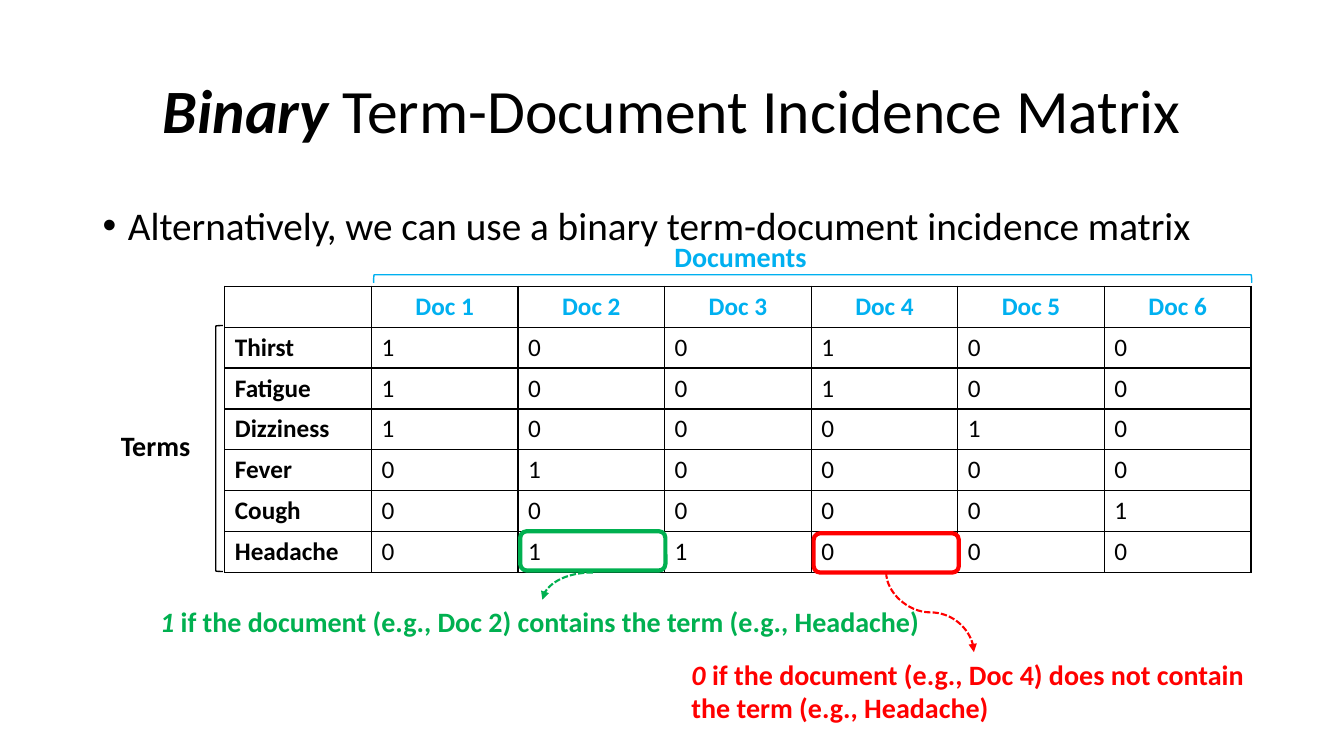
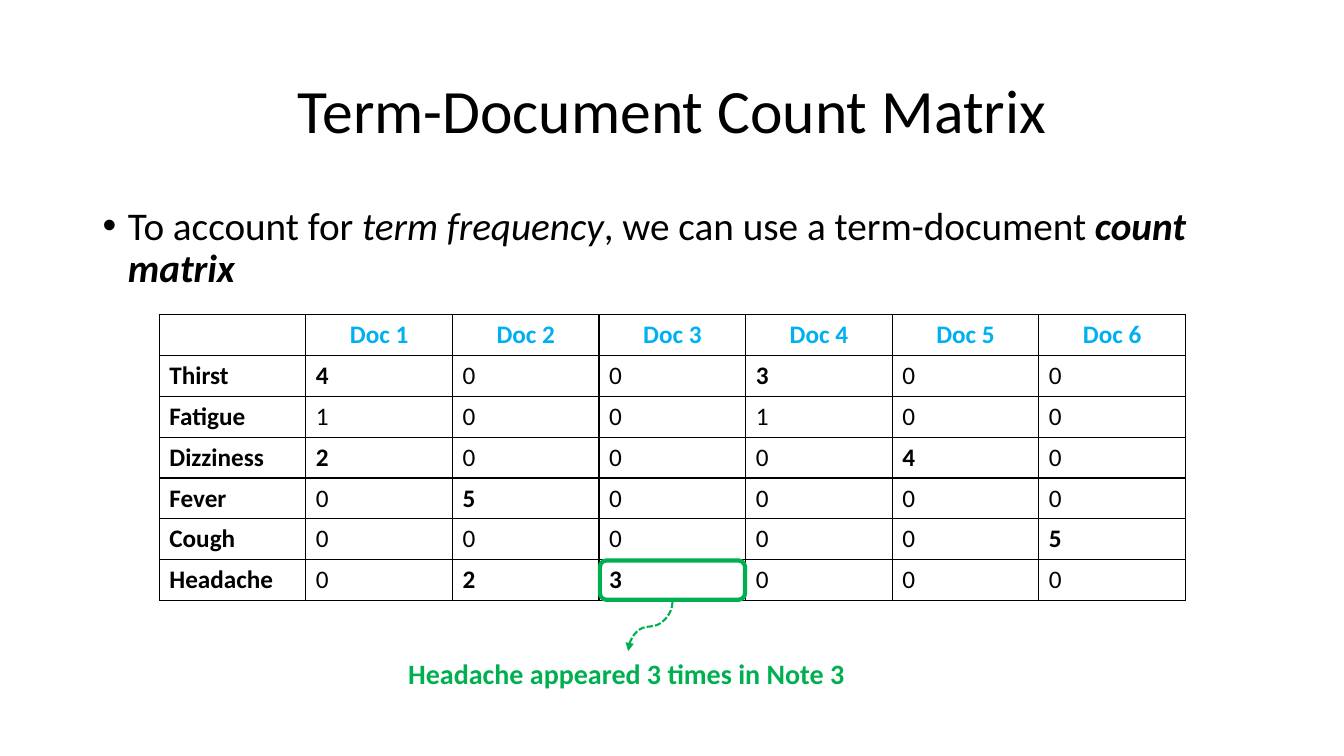
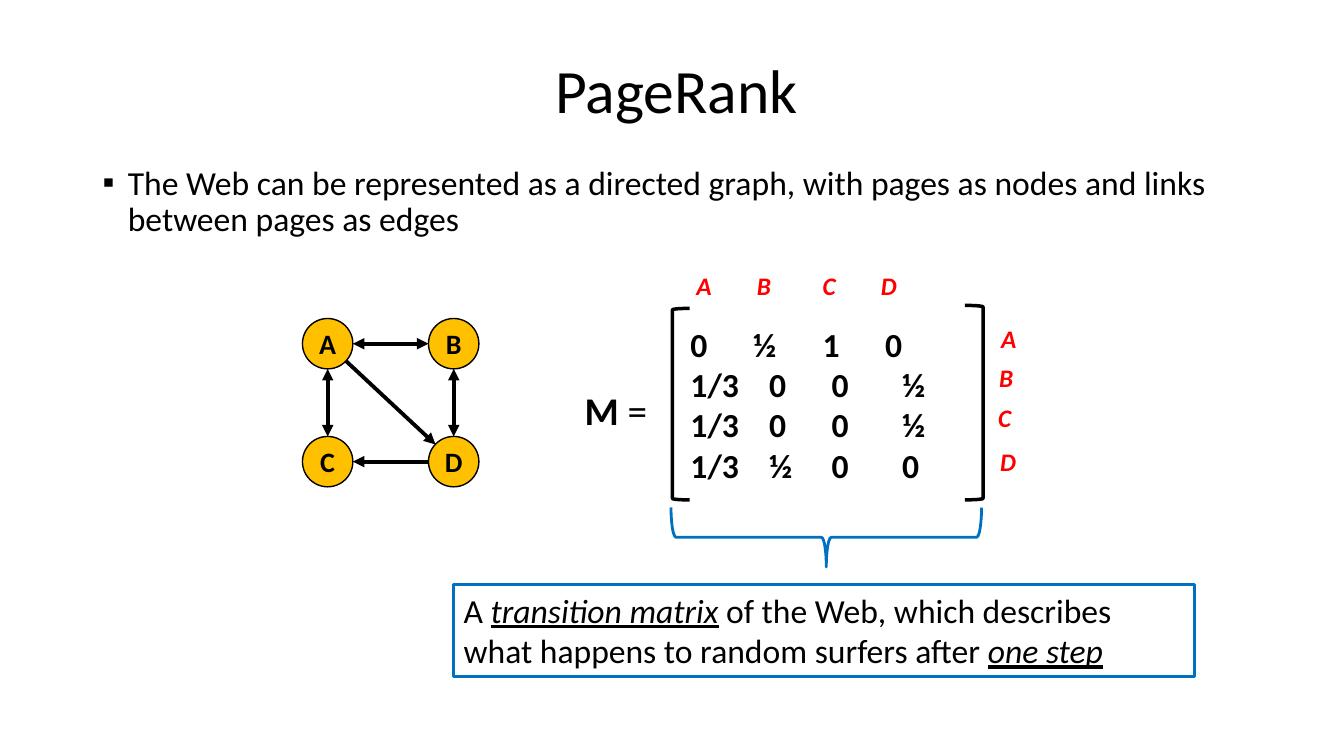
from lxml import etree
from pptx import Presentation
from pptx.dml.color import RGBColor
from pptx.enum.dml import MSO_LINE
from pptx.enum.shapes import MSO_CONNECTOR, MSO_SHAPE
from pptx.enum.text import MSO_ANCHOR, MSO_AUTO_SIZE, PP_ALIGN
from pptx.oxml.ns import qn
from pptx.util import Inches, Pt

FONT = "Calibri"
COLORS = {"black": "000000", "sky": "00B0F0", "red": "FF0000", "green": "00B050",
          "gold": "FFC000", "blue": "0070C0"}
HUE = {name: RGBColor.from_string(code) for name, code in COLORS.items()}
CENTER = PP_ALIGN.CENTER
TOP, MIDDLE = MSO_ANCHOR.TOP, MSO_ANCHOR.MIDDLE
NO_FIT, GROW = MSO_AUTO_SIZE.NONE, MSO_AUTO_SIZE.SHAPE_TO_FIT_TEXT
LINE, CURVE = MSO_CONNECTOR.STRAIGHT, MSO_CONNECTOR.CURVE
DASH = MSO_LINE.SQUARE_DOT
OVAL, RECT, ROUND = MSO_SHAPE.OVAL, MSO_SHAPE.RECTANGLE, MSO_SHAPE.ROUNDED_RECTANGLE
OPEN, CLOSE, BRACE = MSO_SHAPE.LEFT_BRACKET, MSO_SHAPE.RIGHT_BRACKET, MSO_SHAPE.RIGHT_BRACE


def write(para, parts, size, hue="black"):
    """Add (text, marks) runs; marks may hold b, i and u."""
    for text, marks in parts:
        run = para.add_run()
        run.text = text
        font = run.font
        font.name, font.size, font.color.rgb = FONT, Pt(size), HUE[hue]
        font.bold, font.italic, font.underline = "b" in marks, "i" in marks, "u" in marks


def wire(slide, kind, ends, hue, width, heads):
    """Add a connector with arrowheads and no shadow."""
    link = slide.shapes.add_connector(kind, *[Inches(n) for n in ends])
    link.line.color.rgb = HUE[hue]
    link.line.width = Pt(width)
    if kind == CURVE:
        link.line.dash_style = DASH
    props = link._element.spPr
    for head in heads:
        etree.SubElement(props.find(qn("a:ln")), qn("a:" + head), type="triangle")
    etree.SubElement(props, qn("a:effectLst"))
    return props


prs = Presentation()
prs.slide_width, prs.slide_height = Inches(13.33), Inches(7.5)

# Titles and lead bullets
wide, small = (0.92, 0.4, 11.5, 1.45), (1.92, 0.3, 9.58, 1.25)
pages = [
    ([("Binary", "bi"), (" Term-Document Incidence Matrix", "")], wide,
     [("Alternatively, we can use a binary term-document incidence matrix", "")],
     (0.92, 2, 11.72, 5.1), "•", 28),
    ([("Term-Document Count Matrix", "")], wide,
     [("To account for ", ""), ("term frequency", "i"),
      (", we can use a term-document ", ""), ("count matrix", "bi")],
     (0.92, 2, 11.72, 5.1), "•", 28),
    ([("PageRank", "")], small,
     [("The Web can be represented as a directed graph, with pages as nodes and links "
       "between pages as edges", "")],
     (0.92, 1.6, 11.3, 1.08), "▪", 24),
]
for head, spot, lead, area, mark, size in pages:
    slide = prs.slides.add_slide(prs.slide_layouts[5])
    title = slide.shapes.title
    title.left, title.top, title.width, title.height = [Inches(n) for n in spot]
    frame = title.text_frame
    frame.auto_size, frame.vertical_anchor = NO_FIT, MIDDLE
    para = frame.paragraphs[0]
    para.alignment, para.line_spacing = CENTER, 0.9
    write(para, head, 44)

    frame = slide.shapes.add_textbox(*[Inches(n) for n in area]).text_frame
    frame.word_wrap = True
    para = frame.paragraphs[0]
    props = para._p.get_or_add_pPr()
    props.set("marL", str(Inches(0.25)))
    props.set("indent", str(-Inches(0.25)))
    etree.SubElement(props, qn("a:buFont"), typeface="Arial")
    etree.SubElement(props, qn("a:buChar"), char=mark)
    para.line_spacing = 0.9
    write(para, lead, size)

binary, count, rank = prs.slides

# Term tables, counts above one in bold
terms = ["Thirst", "Fatigue", "Dizziness", "Fever", "Cough", "Headache"]
grids = [
    (binary, 2.23, 2.84, ["100100", "100100", "100010", "010000", "000001", "011000"]),
    (count, 1.58, 3.12, ["400300", "100100", "200040", "050000", "000005", "023000"]),
]
for slide, left, top, counts in grids:
    table = slide.shapes.add_table(7, 7, Inches(left), Inches(top),
                                   Inches(10.18), Inches(2.84)).table
    table.first_row = table.horz_banding = False
    rows = [[""] + [f"Doc {n}" for n in range(1, 7)]]
    rows += [[term, *line] for term, line in zip(terms, counts)]
    for r, row in enumerate(rows):
        for c, text in enumerate(row):
            cell = table.cell(r, c)
            props = cell._tc.get_or_add_tcPr()
            for side in ("lnL", "lnR", "lnT", "lnB"):
                edge = etree.SubElement(props, qn("a:" + side), w=str(Pt(1)))
                fill = etree.SubElement(edge, qn("a:solidFill"))
                etree.SubElement(fill, qn("a:srgbClr"), val=COLORS["black"])
            cell.fill.background()
            para = cell.text_frame.paragraphs[0]
            if r == 0:
                para.alignment = CENTER
            if text:
                bold = r == 0 or c == 0 or int(text) > 1
                write(para, [(text, "b" if bold else "")], 18, "black" if r else "sky")

# Brackets, braces and frames
outlines = [
    (binary, OPEN, (2.14, 3.23, 0.07, 2.44), "black", 1, 0),
    (binary, CLOSE, (8.02, -1.59, 0.08, 8.71), "sky", 1, 270),
    (binary, ROUND, (8.07, 5.29, 1.44, 0.39), "red", 3, 0),
    (binary, ROUND, (5.16, 5.27, 1.44, 0.39), "green", 3, 0),
    (count, ROUND, (5.95, 5.56, 1.44, 0.39), "green", 3, 0),
    (rank, OPEN, (6.67, 3.06, 0.17, 1.9), "black", 2.5, 0),
    (rank, CLOSE, (9.57, 3.03, 0.18, 1.93), "black", 2.5, 0),
    (rank, BRACE, (7.9, 3.79, 0.59, 3.08), "blue", 2, 90),
    (rank, RECT, (4.5, 5.8, 7.35, 0.91), "blue", 2, 0),
]
for slide, kind, area, hue, width, turn in outlines:
    shape = slide.shapes.add_shape(kind, *[Inches(n) for n in area])
    shape.shadow.inherit = False
    shape.fill.background()
    shape.line.color.rgb = HUE[hue]
    shape.line.width = Pt(width)
    shape.rotation = turn
    if kind == RECT:
        frame = shape.text_frame
        frame.word_wrap, frame.vertical_anchor = True, TOP
        frame.margin_right = Inches(0.2)
        para = frame.paragraphs[0]
        para.alignment = PP_ALIGN.LEFT
        write(para, [("A ", ""), ("transition matrix", "iu"),
                     (" of the Web, which describes what happens to random surfers after ", ""),
                     ("one step", "iu")], 24)

# Labels
labels = [
    (binary, (1.1, 4.2, 0.9, 0.44), [("Terms", "b")], 20, "black"),
    (binary, (6.59, 2.33, 1.52, 0.44), [("Documents", "b")], 20, "sky"),
    (binary, (6.76, 6.47, 5.79, 0.77),
     [("0", "bi"), (" if the document (e.g., Doc 4) does not contain "
                    "the term (e.g., Headache)", "b")], 20, "red"),
    (binary, (1.49, 5.95, 7.8, 0.44),
     [("1", "bi"), (" if the document (e.g., Doc 2) contains the term (e.g., Headache)", "b")],
     20, "green"),
    (count, (3.95, 6.46, 4.55, 0.44), [("Headache appeared 3 times in Note 3", "b")],
     20, "green"),
    (rank, (5.7, 3.78, 0.98, 0.57), [("M ", "b"), ("=", "")], 28, "black"),
]
sides = [("A", 9.83, 3.16), ("B", 9.81, 3.55), ("C", 9.8, 3.94), ("D", 9.82, 4.38)]
labels += [(rank, (x, y, 0.38, 0.4), [(name, "bi")], 18, "red") for name, x, y in sides]
for slide, area, parts, size, hue in labels:
    frame = slide.shapes.add_textbox(*[Inches(n) for n in area]).text_frame
    frame.word_wrap = area[3] > 0.6
    frame.auto_size = GROW
    write(frame.paragraphs[0], parts, size, hue)

# Curved arrows; the S-shaped ones leave downwards, so their box is turned
wire(binary, CURVE, (5.88, 5.68, 5.38, 5.95), "green", 1.5,
     ["tailEnd"]).find(qn("a:prstGeom")).set("prst", "curvedConnector2")
bends = [(binary, 8.79, 5.68, 9.66, 6.47, "red"), (count, 6.67, 5.97, 6.23, 6.46, "green")]
for slide, x1, y1, x2, y2, hue in bends:
    midx, midy = (x1 + x2) / 2, (y1 + y2) / 2
    dx, dy = abs(x2 - x1) / 2, (y2 - y1) / 2
    props = wire(slide, CURVE, (midx - dy, midy - dx, midx + dy, midy + dx), hue, 1.5,
                 ["tailEnd"])
    xfrm = props.find(qn("a:xfrm"))
    xfrm.set("rot", str((270 if x2 > x1 else 90) * 60000))
    if x2 > x1:
        xfrm.set("flipH", "1")

# Page graph
for n, name in enumerate("ABCD"):
    node = rank.shapes.add_shape(OVAL, Inches(3 + n % 2 * 1.25), Inches(3.16 + n // 2 * 1.17),
                                 Inches(0.5), Inches(0.5))
    node.shadow.inherit = False
    node.fill.solid()
    node.fill.fore_color.rgb = HUE["gold"]
    node.line.color.rgb = HUE["black"]
    node.line.width = Pt(1)
    frame = node.text_frame
    frame.margin_left = frame.margin_right = frame.margin_top = frame.margin_bottom = 0
    frame.word_wrap, frame.vertical_anchor = False, MIDDLE
    para = frame.paragraphs[0]
    para.alignment = CENTER
    write(para, [(name, "b")], 20)
both = ["headEnd", "tailEnd"]
edges = [
    ((3.43, 3.58, 4.32, 4.41), ["tailEnd"]),
    ((4.25, 3.41, 3.5, 3.41), both),
    ((4.5, 3.66, 4.5, 4.33), both),
    ((3.25, 3.66, 3.25, 4.33), both),
    ((4.25, 4.58, 3.5, 4.58), ["tailEnd"]),
]
for ends, heads in edges:
    wire(rank, LINE, ends, "black", 2.75, heads)

# Matrix entries and column names, set on tab stops
low = (0.78, 1.4, 2.1)
blocks = [
    ((6.81, 2.63, 2.76, 0.4), 18, "red", "bi", [("A\tB\tC\tD", (0.6, 1.25, 1.83))]),
    ((6.75, 3.16, 2.91, 1.72), 24, "black", "b",
     [("0\t½\t1\t0", (0.62, 1.31, 1.93)), ("1/3\t0\t0\t½", low),
      ("1/3\t0\t0\t½", low), ("1/3\t½\t0\t0", low)]),
]
for area, size, hue, marks, lines in blocks:
    frame = rank.shapes.add_textbox(*[Inches(n) for n in area]).text_frame
    frame.word_wrap = True
    for n, (text, stops) in enumerate(lines):
        para = frame.add_paragraph() if n else frame.paragraphs[0]
        tabs = etree.SubElement(para._p.get_or_add_pPr(), qn("a:tabLst"))
        for stop in stops:
            etree.SubElement(tabs, qn("a:tab"), pos=str(Inches(stop)), algn="l")
        write(para, [(text, marks)], size, hue)

prs.save("out.pptx")
